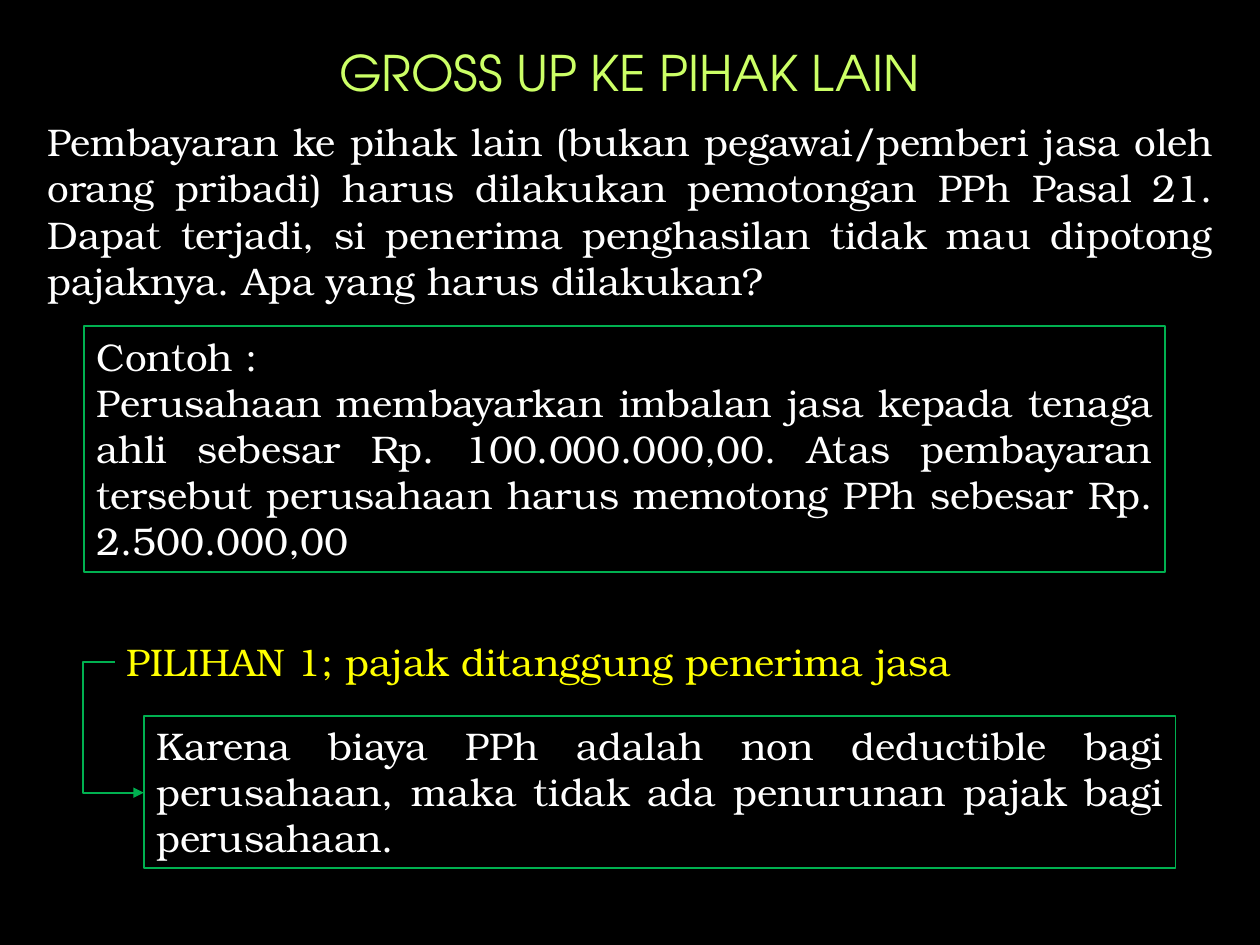
from lxml.etree import SubElement
from pptx import Presentation
from pptx.dml.color import RGBColor
from pptx.enum.shapes import MSO_CONNECTOR, MSO_SHAPE
from pptx.enum.text import MSO_ANCHOR, MSO_AUTO_SIZE, PP_ALIGN
from pptx.oxml.ns import qn
from pptx.util import Cm, Pt

GREEN = "00B050"
WHITE = "FFFFFF"
BODY_FONT = "TeX Gyre Bonum"


def color(hex_string):
    return RGBColor.from_string(hex_string)


presentation = Presentation()
presentation.slide_width = Cm(25.4)
presentation.slide_height = Cm(19.05)
slide = presentation.slides.add_slide(presentation.slide_layouts[6])
slide.background.fill.solid()
slide.background.fill.fore_color.rgb = color("000000")

# Text blocks: position, framed, alignment, font, size, colour, text
blocks = [
    ((3.45, 0.74, 18.47, 1.45), False, PP_ALIGN.CENTER, "TeX Gyre Adventor", 28, "CCFF66",
     "GROSS UP KE PIHAK LAIN"),
    ((0.71, 2.26, 24, 4.01), False, PP_ALIGN.JUSTIFY, BODY_FONT, 22, WHITE,
     "Pembayaran ke pihak lain (bukan pegawai/pemberi jasa oleh orang pribadi) "
     "harus dilakukan pemotongan PPh Pasal 21. Dapat terjadi, si penerima "
     "penghasilan tidak mau dipotong pajaknya. Apa yang harus dilakukan?"),
    ((1.7, 6.58, 21.79, 4.95), True, PP_ALIGN.JUSTIFY, BODY_FONT, 22, WHITE,
     "Contoh :\n"
     "Perusahaan membayarkan imbalan jasa kepada tenaga ahli sebesar "
     "Rp. 100.000.000,00. Atas pembayaran tersebut perusahaan harus memotong "
     "PPh sebesar Rp. 2.500.000,00"),
    ((2.31, 12.73, 21.92, 1.19), False, PP_ALIGN.LEFT, BODY_FONT, 22, "FFFF00",
     "PILIHAN 1; pajak ditanggung penerima jasa"),
    ((2.9, 14.43, 20.8, 3.07), True, PP_ALIGN.JUSTIFY, BODY_FONT, 22, WHITE,
     "Karena biaya PPh adalah non deductible bagi perusahaan, maka tidak ada "
     "penurunan pajak bagi perusahaan."),
]

for position, framed, alignment, font_name, size, text_color, text in blocks:
    box = [Cm(length) for length in position]
    if framed:
        shape = slide.shapes.add_shape(MSO_SHAPE.RECTANGLE, *box)
        shape.shadow.inherit = False
        shape.fill.background()
        shape.line.color.rgb = color(GREEN)
        shape.line.width = Pt(1)
    else:
        shape = slide.shapes.add_textbox(*box)
    text_frame = shape.text_frame
    text_frame.text = text
    text_frame.word_wrap = True
    text_frame.auto_size = MSO_AUTO_SIZE.SHAPE_TO_FIT_TEXT
    text_frame.vertical_anchor = MSO_ANCHOR.TOP
    for paragraph in text_frame.paragraphs:
        paragraph.alignment = alignment
        for run in paragraph.runs:
            run.font.name = font_name
            run.font.size = Pt(size)
            run.font.color.rgb = color(text_color)

# Elbow arrow from the option heading to its explanation
arrow = slide.shapes.add_connector(
    MSO_CONNECTOR.ELBOW, Cm(2.31), Cm(13.34), Cm(2.9), Cm(15.98))
arrow.line.color.rgb = color(GREEN)
arrow.line.width = Pt(1)
properties = arrow.element.spPr
SubElement(arrow.line._get_or_add_ln(), qn("a:tailEnd"), type="triangle")
SubElement(properties, qn("a:effectLst"))

# The elbow bends out to the left of both ends
adjustments = properties.find(qn("a:prstGeom")).find(qn("a:avLst"))
SubElement(adjustments, qn("a:gd"), name="adj1", fmla="val -107000")

presentation.save("out.pptx")
